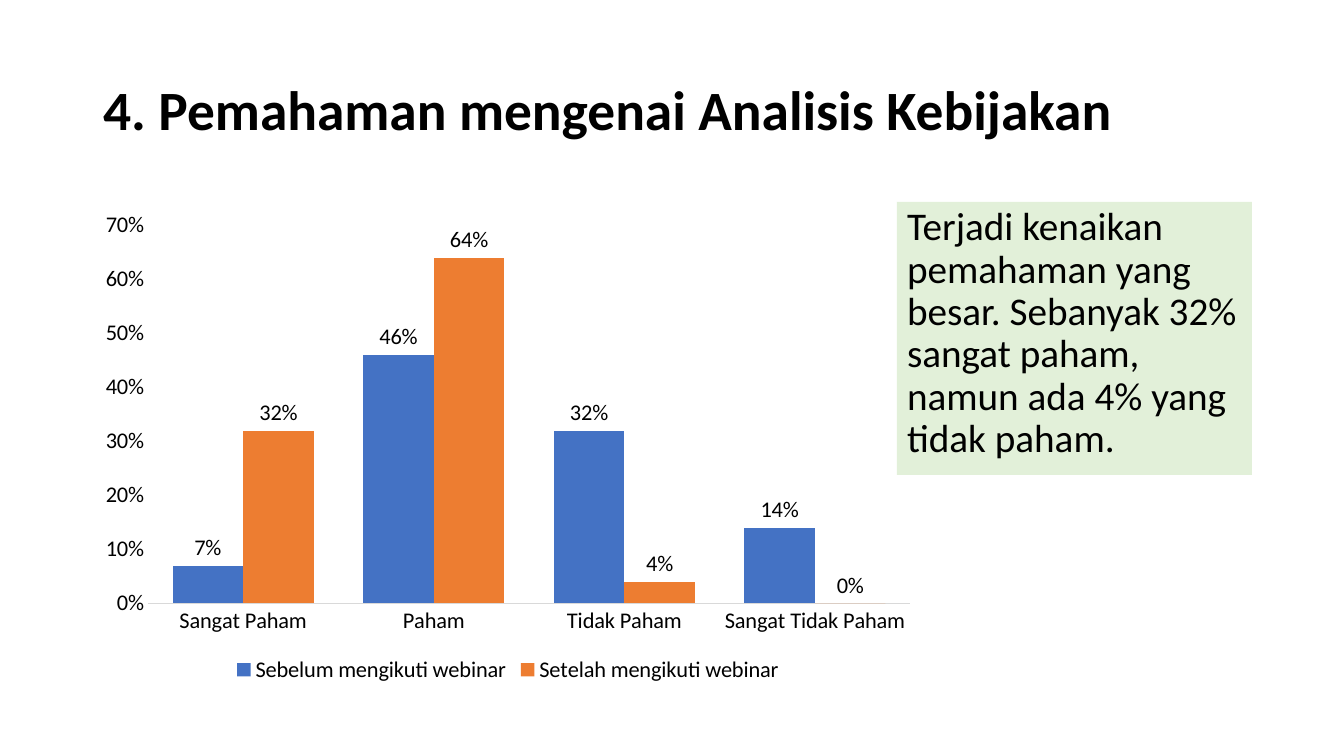
import pptx
import pptx.chart.data
import pptx.dml.color
import pptx.enum.chart
import pptx.enum.text
import pptx.oxml.ns
import pptx.util
from dataclasses import dataclass
from lxml import etree

EMU_PER_PX = 914400 / 100.8


@dataclass(frozen=True)
class Theme:
    font: str = "Calibri"
    text: str = "000000"
    panel: str = "E2F0D9"
    axis_line: str = "D9D9D9"
    series: tuple = ("4472C4", "ED7D31")
    title_size: float = 39.6
    body_size: int = 28
    chart_size: int = 16


def px(length):
    return pptx.util.Emu(round(length * EMU_PER_PX))


def rgb(value):
    return pptx.dml.color.RGBColor.from_string(value)


class SlideBuilder:
    def __init__(self, slide, theme):
        self.slide = slide
        self.theme = theme

    def style_font(self, font, size, bold=False):
        font.name = self.theme.font
        font.size = pptx.util.Pt(size)
        font.bold = bold
        font.color.rgb = rgb(self.theme.text)

    def fill_placeholder(self, holder, box, text, size, anchor, bold=False):
        holder.left, holder.top, holder.width, holder.height = map(px, box)
        frame = holder.text_frame
        frame.text = text
        frame.word_wrap = True
        frame.auto_size = pptx.enum.text.MSO_AUTO_SIZE.NONE
        frame.vertical_anchor = anchor
        paragraph = frame.paragraphs[0]
        paragraph.alignment = pptx.enum.text.PP_ALIGN.LEFT
        paragraph.line_spacing = 0.9
        self.style_font(paragraph.font, size, bold)
        return paragraph

    def title(self, box, text):
        self.fill_placeholder(self.slide.shapes.title, box, text, self.theme.title_size,
                              pptx.enum.text.MSO_ANCHOR.MIDDLE, bold=True)

    def panel(self, box, text):
        holder = self.slide.placeholders[1]
        paragraph = self.fill_placeholder(holder, box, text, self.theme.body_size,
                                          pptx.enum.text.MSO_ANCHOR.TOP)
        paragraph.space_before = pptx.util.Pt(10)
        holder.fill.solid()
        holder.fill.fore_color.rgb = rgb(self.theme.panel)
        # No bullet or hanging indent
        properties = paragraph._p.get_or_add_pPr()
        properties.set("marL", "0")
        properties.set("indent", "0")
        etree.SubElement(properties, pptx.oxml.ns.qn("a:buNone")) if properties.find(
            pptx.oxml.ns.qn("a:defRPr")) is None else properties.find(
            pptx.oxml.ns.qn("a:defRPr")).addprevious(
            etree.Element(pptx.oxml.ns.qn("a:buNone")))
        # Bring the panel in front of the chart
        self.slide.shapes._spTree.append(holder._element)

    def column_chart(self, box, categories, series):
        data = pptx.chart.data.CategoryChartData(number_format="0%")
        data.categories = categories
        for name, values in series.items():
            data.add_series(name, values)
        chart = self.slide.shapes.add_chart(
            pptx.enum.chart.XL_CHART_TYPE.COLUMN_CLUSTERED, *map(px, box), data).chart
        self.style_font(chart.font, self.theme.chart_size)
        chart.has_title = False

        # Legend
        chart.has_legend = True
        chart.legend.position = pptx.enum.chart.XL_LEGEND_POSITION.BOTTOM
        chart.legend.include_in_layout = False
        self.style_font(chart.legend.font, self.theme.chart_size)

        # Axes
        for axis in (chart.category_axis, chart.value_axis):
            axis.has_major_gridlines = False
            axis.major_tick_mark = pptx.enum.chart.XL_TICK_MARK.NONE
            axis.minor_tick_mark = pptx.enum.chart.XL_TICK_MARK.NONE
            self.style_font(axis.tick_labels.font, self.theme.chart_size)
        category_line = chart.category_axis.format.line
        category_line.color.rgb = rgb(self.theme.axis_line)
        category_line.width = pptx.util.Pt(0.75)
        percent_axis = chart.value_axis
        percent_axis.format.line.fill.background()
        percent_axis.minimum_scale = 0
        percent_axis.maximum_scale = 0.7
        percent_axis.major_unit = 0.1
        percent_axis.tick_labels.number_format = "0%"
        percent_axis.tick_labels.number_format_is_linked = False

        # Columns and their labels
        plot = chart.plots[0]
        plot.gap_width = 70
        plot.overlap = 0
        plot.vary_by_categories = False
        for columns, color in zip(plot.series, self.theme.series):
            columns.format.fill.solid()
            columns.format.fill.fore_color.rgb = rgb(color)
            columns.invert_if_negative = False
            labels = columns.data_labels
            labels.show_value = True
            labels.number_format = "0%"
            labels.number_format_is_linked = False
            labels.position = pptx.enum.chart.XL_LABEL_POSITION.OUTSIDE_END
            self.style_font(labels.font, self.theme.chart_size)


def main():
    deck = pptx.Presentation()
    deck.slide_width, deck.slide_height = px(1344), px(756)
    builder = SlideBuilder(deck.slides.add_slide(deck.slide_layouts[1]), Theme())

    builder.title((93, 40, 1159, 146), "4. Pemahaman mengenai Analisis Kebijakan")
    builder.column_chart(
        (89, 202, 838, 486),
        ("Sangat Paham", "Paham", "Tidak Paham", "Sangat Tidak Paham"),
        {
            "Sebelum mengikuti webinar": (0.07, 0.46, 0.32, 0.14),
            "Setelah mengikuti webinar": (0.32, 0.64, 0.04, 0),
        },
    )
    builder.panel(
        (897, 202, 355, 273),
        "Terjadi kenaikan pemahaman yang besar. Sebanyak 32% sangat paham, "
        "namun ada 4% yang tidak paham.",
    )

    # Date, footer and slide number are not carried over by add_slide
    deck.save("out.pptx")


if __name__ == "__main__":
    main()
